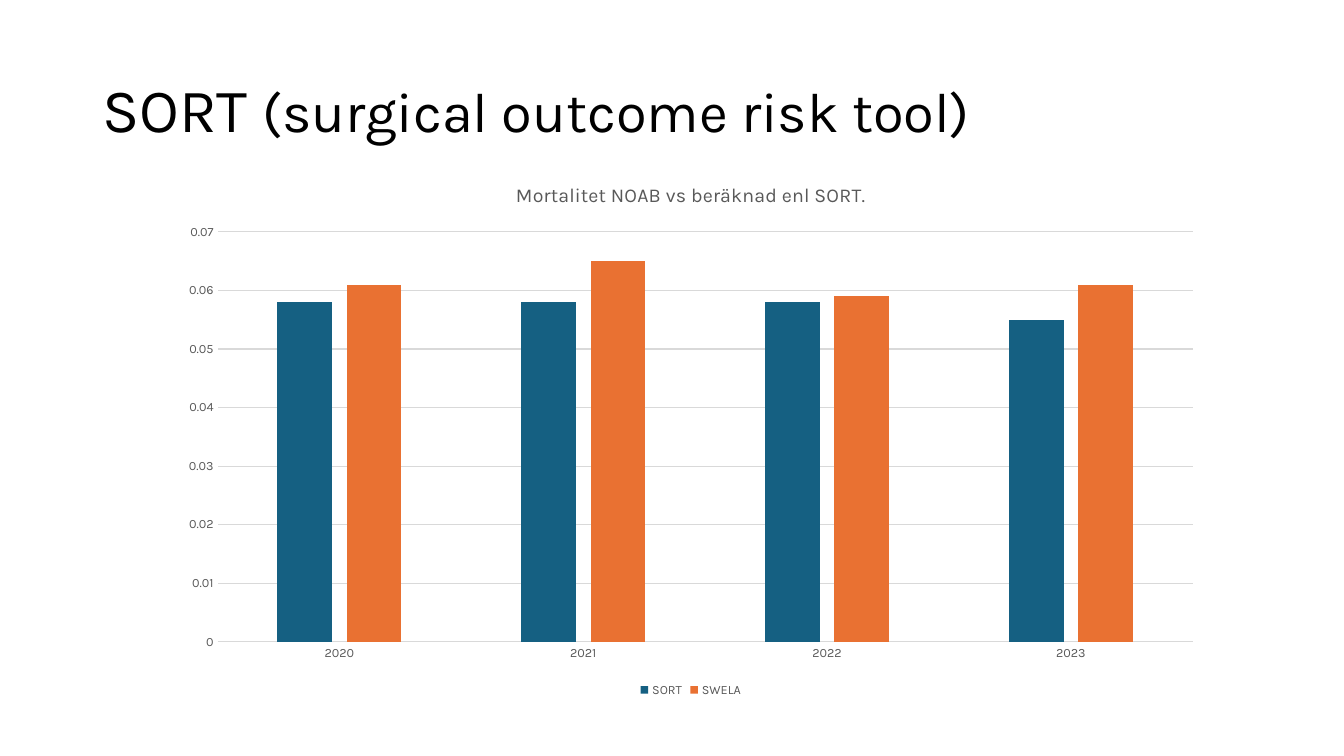
from pptx import Presentation
from pptx.chart.data import CategoryChartData
from pptx.dml.color import RGBColor
from pptx.enum.chart import XL_CHART_TYPE as ChartType, XL_LEGEND_POSITION as LegendPosition
from pptx.enum.chart import XL_TICK_MARK as TickMark
from pptx.enum.text import MSO_ANCHOR as Anchor
from pptx.util import Pt

PX = 9525
FONT = "Karla"
COLORS = {"title": "000000", "label": "595959", "grid": "D9D9D9",
          "SORT": "156082", "SWELA": "E97132"}
YEARS = ["2020", "2021", "2022", "2023"]
MORTALITY = {"SORT": [0.058, 0.058, 0.058, 0.055],
             "SWELA": [0.061, 0.065, 0.059, 0.061]}


def color(name):
    return RGBColor.from_string(COLORS[name])


def style_font(font, size, color_name):
    font.name = FONT
    font.size = Pt(size)
    font.bold = False
    font.color.rgb = color(color_name)


def style_line(line):
    line.color.rgb = color("grid")
    line.width = Pt(0.75)


def add_title(page, box):
    frame = page.shapes.add_textbox(*(length * PX for length in box)).text_frame
    frame.word_wrap = True
    frame.vertical_anchor = Anchor.MIDDLE
    para = frame.paragraphs[0]
    para.line_spacing = 0.9
    for text, size in (("SORT ", 44), ("(surgical outcome risk tool)", 40)):
        span = para.add_run()
        span.text = text
        style_font(span.font, size, "title")


def add_mortality_chart(page, box):
    data = CategoryChartData()
    data.categories = YEARS
    for name, values in MORTALITY.items():
        data.add_series(name, values)
    chart = page.shapes.add_chart(
        ChartType.COLUMN_CLUSTERED, *(length * PX for length in box), data).chart
    style_font(chart.font, 9, "label")

    chart.has_title = True
    para = chart.chart_title.text_frame.paragraphs[0]
    para.text = "Mortalitet NOAB vs beräknad enl SORT."
    style_font(para.font, 14, "label")
    chart.chart_title.include_in_layout = False

    chart.has_legend = True
    chart.legend.position = LegendPosition.BOTTOM
    chart.legend.include_in_layout = False
    style_font(chart.legend.font, 9, "label")

    for axis in (chart.category_axis, chart.value_axis):
        axis.major_tick_mark = TickMark.NONE
        axis.minor_tick_mark = TickMark.NONE
        style_font(axis.tick_labels.font, 9, "label")
    style_line(chart.category_axis.format.line)
    value_axis = chart.value_axis
    value_axis.minimum_scale = 0
    value_axis.maximum_scale = 0.07
    value_axis.major_unit = 0.01
    value_axis.format.line.fill.background()
    style_line(value_axis.major_gridlines.format.line)

    plot = chart.plots[0]
    plot.vary_by_categories = False
    plot.gap_width = 219
    plot.overlap = -27
    for series in plot.series:
        series.format.fill.solid()
        series.format.fill.fore_color.rgb = color(series.name)


def main():
    deck = Presentation()
    deck.slide_width = 1280 * PX
    deck.slide_height = 720 * PX
    page = deck.slides.add_slide(deck.slide_layouts[6])
    add_title(page, (88, 38, 1104, 139))
    add_mortality_chart(page, (160, 155, 996, 513))
    deck.save("out.pptx")


if __name__ == "__main__":
    main()
